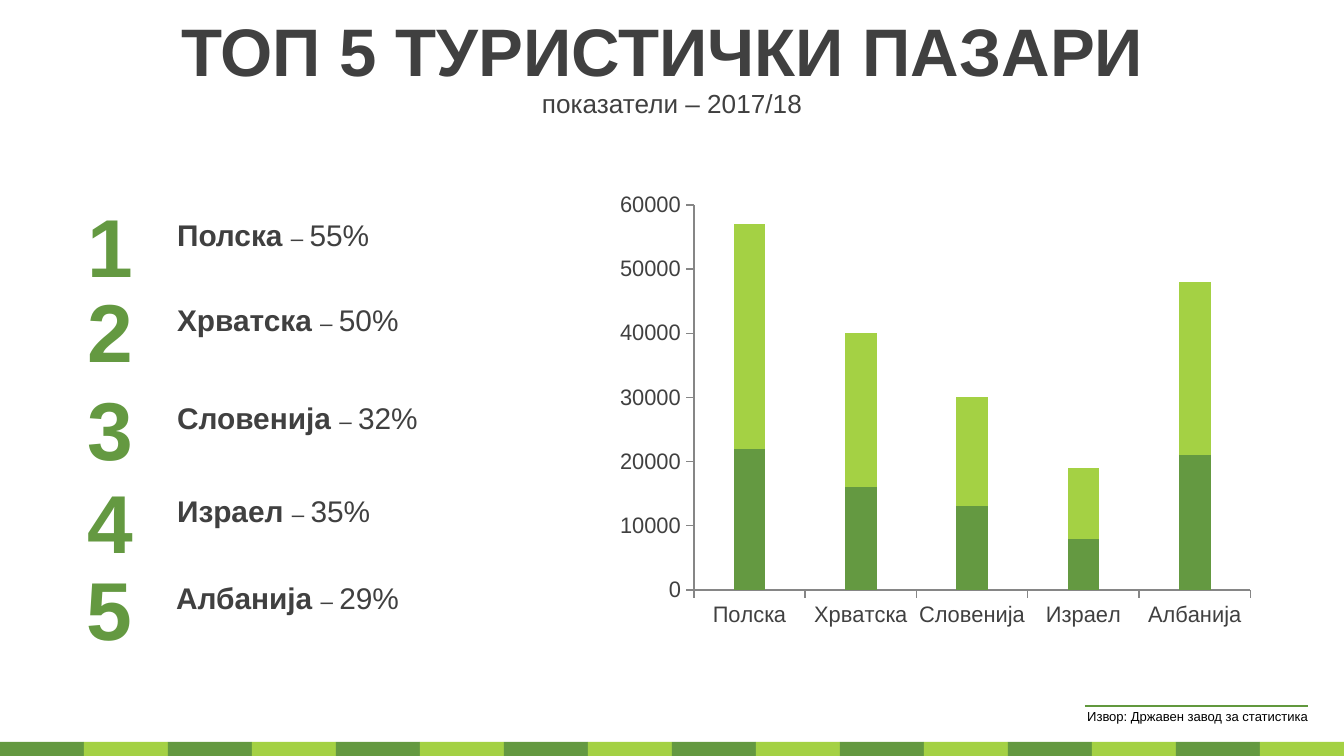
from lxml.etree import SubElement
from pptx import Presentation
from pptx.chart.data import CategoryChartData
from pptx.dml.color import RGBColor
from pptx.enum.chart import XL_CHART_TYPE, XL_TICK_MARK
from pptx.enum.shapes import MSO_CONNECTOR, MSO_SHAPE
from pptx.enum.text import MSO_ANCHOR, MSO_AUTO_SIZE, PP_ALIGN
from pptx.oxml import parse_xml
from pptx.oxml.ns import nsdecls, qn
from pptx.util import Pt

PX = 914400 / 134.4  # EMU in one px
WIDTH, HEIGHT = 1344, 756

FONT = "Arial"
GREEN = RGBColor(0x64, 0x99, 0x41)
LIME = RGBColor(0xA4, 0xD1, 0x44)
RULE_GREEN = RGBColor(0x61, 0x98, 0x3D)
DARK = RGBColor(0x40, 0x40, 0x40)
AXIS_GREY = RGBColor(0x86, 0x86, 0x86)
BLACK = RGBColor(0, 0, 0)

# country, growth, left and top of its row, visits in each series
MARKETS = [
    ("Полска", "55%", 28, 188, 22000, 35000),
    ("Хрватска", "50%", 28, 273, 16000, 24000),
    ("Словенија", "32%", 28, 371, 13000, 17000),
    ("Израел", "35%", 28, 464, 8000, 11000),
    ("Албанија", "29%", 27, 551, 21000, 27000),
]


def px(*lengths):
    return [round(length * PX) for length in lengths]


def style_font(font, size, color, bold=False):
    font.name = FONT
    font.size = Pt(size)
    font.bold = bold
    font.color.rgb = color


def write(frame, text, size=16, color=DARK, bold=False, align=PP_ALIGN.LEFT,
          anchor=MSO_ANCHOR.TOP, wrap=True):
    """Append a run to the frame's first paragraph and format both."""
    frame.word_wrap = wrap
    frame.auto_size = MSO_AUTO_SIZE.NONE
    frame.vertical_anchor = anchor
    paragraph = frame.paragraphs[0]
    paragraph.alignment = align
    paragraph.space_before = Pt(0)
    run = paragraph.add_run()
    run.text = text
    style_font(run.font, size, color, bold)


def add_stripes(slide, left, top, width, height, count=16):
    step = width / count
    for index in range(count):
        stripe = slide.shapes.add_shape(
            MSO_SHAPE.RECTANGLE, *px(left + index * step, top, step, height))
        stripe.shadow.inherit = False
        stripe.fill.solid()
        stripe.fill.fore_color.rgb = LIME if index % 2 else GREEN
        stripe.line.fill.background()


def add_heading(slide, left, top, width):
    title, subtitle = slide.placeholders
    centred = {"align": PP_ALIGN.CENTER, "anchor": MSO_ANCHOR.MIDDLE}
    for holder, offset, height in ((title, 0, 126), (subtitle, 95, 42)):
        holder.left, holder.top, holder.width, holder.height = px(
            left, top + offset, width, height)
    write(title.text_frame, "ТОП 5 ТУРИСТИЧКИ ПАЗАРИ ", size=36, bold=True, **centred)
    write(subtitle.text_frame, "показатели – 2017/18", size=14, **centred)


def add_market_row(slide, left, top, rank, country, growth):
    number = slide.shapes.add_textbox(*px(left, top, 164, 113))
    write(number.text_frame, str(rank), size=44, color=GREEN, bold=True,
          align=PP_ALIGN.CENTER, anchor=MSO_ANCHOR.MIDDLE)
    label = slide.shapes.add_textbox(*px(left + 136, top + 22, 519, 50)).text_frame
    write(label, f"{country} ", bold=True)
    write(label, "– ", size=12)
    write(label, growth)


def add_visits_chart(slide, left, top, width, height):
    visits = CategoryChartData(number_format="General")
    countries, _, _, _, first, second = zip(*MARKETS)
    visits.categories = countries
    visits.add_series("Series 1", first)
    visits.add_series("Series 2", second)
    chart = slide.shapes.add_chart(
        XL_CHART_TYPE.COLUMN_STACKED, *px(left, top, width, height), visits).chart
    chart.has_legend = False
    chart.has_title = False
    style_font(chart.font, 18, BLACK)

    # Columns
    columns = chart.plots[0]
    columns.gap_width = 250
    columns.overlap = 100
    columns.vary_by_categories = False
    for series, color in zip(columns.series, (GREEN, LIME)):
        series.format.fill.solid()
        series.format.fill.fore_color.rgb = color

    # Axes
    for axis in (chart.category_axis, chart.value_axis):
        axis.has_major_gridlines = False
        axis.major_tick_mark = XL_TICK_MARK.OUTSIDE
        axis.minor_tick_mark = XL_TICK_MARK.NONE
        axis.format.line.color.rgb = AXIS_GREY
        axis.format.line.width = Pt(0.75)
        style_font(axis.tick_labels.font, 12, DARK)
    chart.value_axis.minimum_scale = 0
    chart.value_axis.maximum_scale = 60000
    chart.value_axis.major_unit = 10000

    # Inner plot area, as shares of the chart
    plot_area = chart.plots[0]._element.getparent()
    for old_layout in plot_area.findall(qn("c:layout")):
        plot_area.remove(old_layout)
    places = "".join(
        f'<c:{tag} val="{value}"/>' for tag, value in (
            ("layoutTarget", "inner"), ("xMode", "edge"), ("yMode", "edge"),
            ("x", 0.094), ("y", 0.052), ("w", 0.883), ("h", 0.713)))
    plot_area.insert(0, parse_xml(
        f'<c:layout {nsdecls("c")}><c:manualLayout>{places}</c:manualLayout></c:layout>'))


def add_source_note(slide, left, top, width, height):
    note = slide.shapes.add_textbox(*px(left, top, width, height))
    write(note.text_frame, "Извор: Државен завод за статистика", size=7,
          color=BLACK, wrap=False)
    rule = slide.shapes.add_connector(
        MSO_CONNECTOR.STRAIGHT, *px(left + 11, top + 4, left + 234, top + 4))
    rule.line.color.rgb = RULE_GREEN
    rule.line.width = Pt(1)
    SubElement(rule._element.spPr, qn("a:effectLst"))


def main():
    deck = Presentation()
    deck.slide_width, deck.slide_height = px(WIDTH, HEIGHT)
    slide = deck.slides.add_slide(deck.slide_layouts.get_by_name("Section Header"))

    add_stripes(slide, 0, HEIGHT - 14, WIDTH, 14)
    add_heading(slide, 0, -13, WIDTH)
    add_visits_chart(slide, 620, 177, 645, 540)
    for rank, (country, growth, left, top, *_) in enumerate(MARKETS, start=1):
        add_market_row(slide, left, top, rank, country, growth)
    add_source_note(slide, 1074, 702, 253, 30)

    deck.save("out.pptx")


if __name__ == "__main__":
    main()
